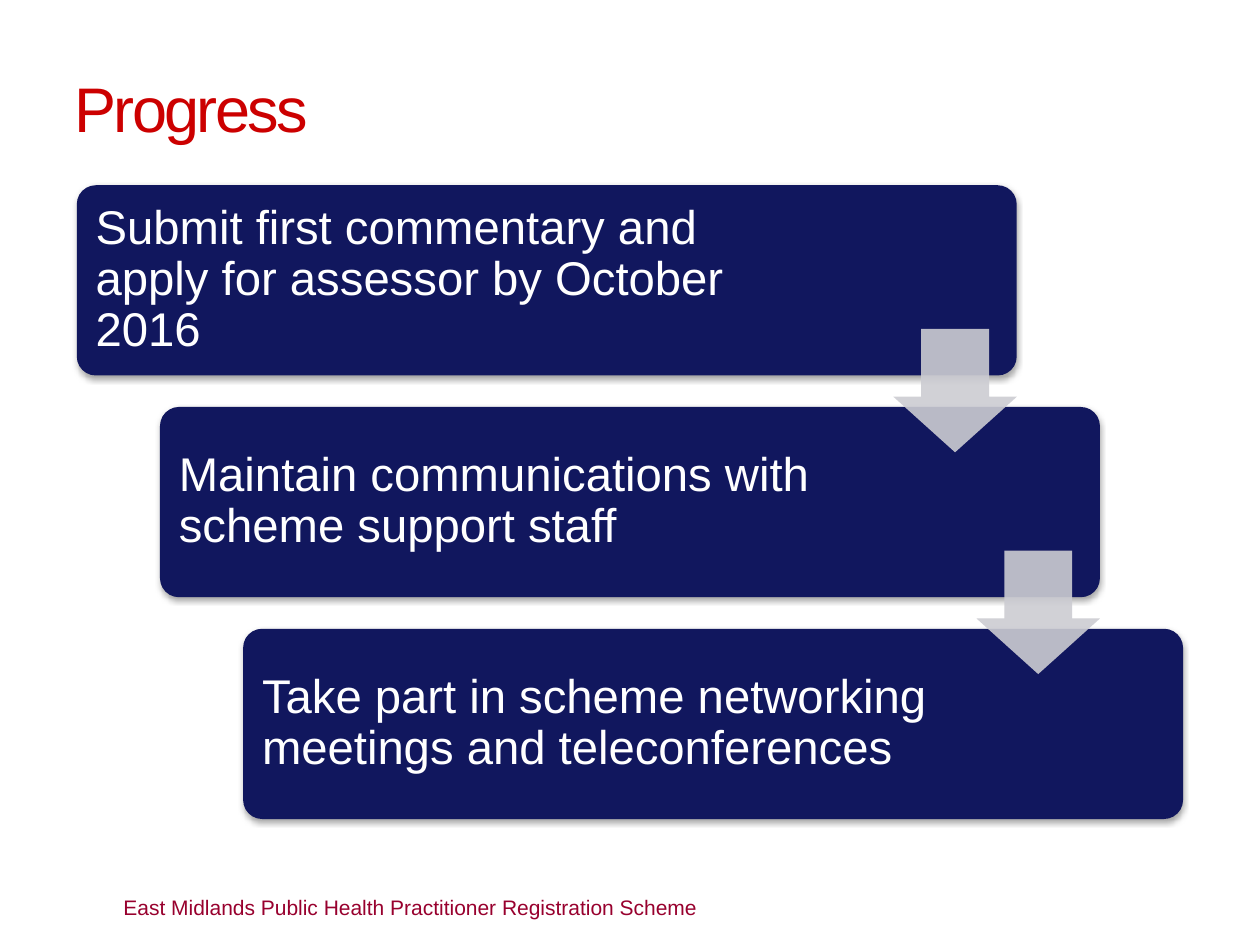
import pptx
import pptx.dml.color
import pptx.enum.shapes
import pptx.enum.text
import pptx.oxml
import pptx.oxml.ns
import pptx.util
from pptx.util import Inches

RED = pptx.dml.color.RGBColor(0xCC, 0x00, 0x00)
NAVY = pptx.dml.color.RGBColor(0x11, 0x17, 0x5E)
WHITE = pptx.dml.color.RGBColor(0xFF, 0xFF, 0xFF)
GREY = pptx.dml.color.RGBColor(0xCC, 0xCC, 0xD2)
MAROON = pptx.dml.color.RGBColor(0x98, 0x00, 0x2E)
SHAPES = pptx.enum.shapes.MSO_SHAPE
ANCHOR = pptx.enum.text.MSO_ANCHOR

# Each step: wording and width of its text
STEPS = [
    ("Submit first commentary and apply for assessor by October 2016", 5.83),
    ("Maintain communications with scheme support staff", 5.73),
    ("Take part in scheme networking meetings and teleconferences", 5.73),
]
STEP_LEFT, STEP_TOP = 0.61, 1.47
STEP_WIDTH, STEP_HEIGHT = 7.46, 1.51
SHIFT_X, SHIFT_Y = 0.66, 1.76
TEXT_INSET = 0.04
ARROW_LEFT, ARROW_TOP, ARROW_SIZE = 7.09, 2.61, 0.98

SHADOW_XML = (
    f'<a:effectLst {pptx.oxml.ns.nsdecls("a")}>'
    '<a:outerShdw blurRad="40000" dist="23000" dir="5400000" rotWithShape="0">'
    '<a:srgbClr val="000000"><a:alpha val="35000"/></a:srgbClr>'
    '</a:outerShdw></a:effectLst>'
)
ALPHA_XML = f'<a:alpha {pptx.oxml.ns.nsdecls("a")} val="90000"/>'


def add_text(slide, text, left, top, width, height, size, color,
             anchor=ANCHOR.MIDDLE, margin=0):
    """Add a one-run text box and return its paragraph and run."""
    box = slide.shapes.add_textbox(
        Inches(left), Inches(top), Inches(width), Inches(height))
    frame = box.text_frame
    frame.word_wrap = True
    frame.vertical_anchor = anchor
    frame.margin_left = frame.margin_right = Inches(margin)
    frame.margin_top = frame.margin_bottom = Inches(margin)
    paragraph = frame.paragraphs[0]
    run = paragraph.add_run()
    run.text = text
    run.font.name = "Arial"
    run.font.size = pptx.util.Pt(size)
    run.font.color.rgb = color
    return paragraph, run


def add_filled_shape(slide, kind, left, top, width, height, color, adjustments):
    shape = slide.shapes.add_shape(
        kind, Inches(left), Inches(top), Inches(width), Inches(height))
    for index, value in enumerate(adjustments):
        shape.adjustments[index] = value
    shape.fill.solid()
    shape.fill.fore_color.rgb = color
    shape.line.fill.background()
    shape.shadow.inherit = False
    return shape


def add_step(slide, index, text, text_width):
    left = STEP_LEFT + index * SHIFT_X
    top = STEP_TOP + index * SHIFT_Y
    card = add_filled_shape(slide, SHAPES.ROUNDED_RECTANGLE, left, top,
                            STEP_WIDTH, STEP_HEIGHT, NAVY, [0.1])
    properties = card._element.spPr
    properties.replace(properties.find(pptx.oxml.ns.qn("a:effectLst")),
                       pptx.oxml.parse_xml(SHADOW_XML))
    paragraph, _ = add_text(
        slide, text, left + TEXT_INSET, top + TEXT_INSET, text_width,
        STEP_HEIGHT - 2 * TEXT_INSET, 27, WHITE, margin=0.11)
    paragraph.line_spacing = 0.9


def add_arrow(slide, index):
    """Add the translucent arrow that leads from one step to the next."""
    arrow = add_filled_shape(
        slide, SHAPES.DOWN_ARROW, ARROW_LEFT + index * SHIFT_X,
        ARROW_TOP + index * SHIFT_Y, ARROW_SIZE, ARROW_SIZE, GREY, [0.55, 0.45])
    color = arrow._element.spPr.find(
        f'{pptx.oxml.ns.qn("a:solidFill")}/{pptx.oxml.ns.qn("a:srgbClr")}')
    color.append(pptx.oxml.parse_xml(ALPHA_XML))


def add_title(slide):
    _, run = add_text(slide, "Progress", 0.59, 0.52, 8.78, 0.63, 36, RED,
                      anchor=ANCHOR.BOTTOM)
    run._r.get_or_add_rPr().set("spc", "-150")


def main():
    presentation = pptx.Presentation()
    presentation.slide_width = Inches(10)
    presentation.slide_height = Inches(7.5)
    slide = presentation.slides.add_slide(presentation.slide_layouts[6])

    add_title(slide)
    for index, (text, text_width) in enumerate(STEPS):
        add_step(slide, index, text, text_width)
    for index in range(len(STEPS) - 1):
        add_arrow(slide, index)
    add_text(slide, "East Midlands Public Health Practitioner Registration Scheme",
             0.98, 6.9, 8.43, 0.6, 12, MAROON)

    presentation.save("out.pptx")


if __name__ == "__main__":
    main()
